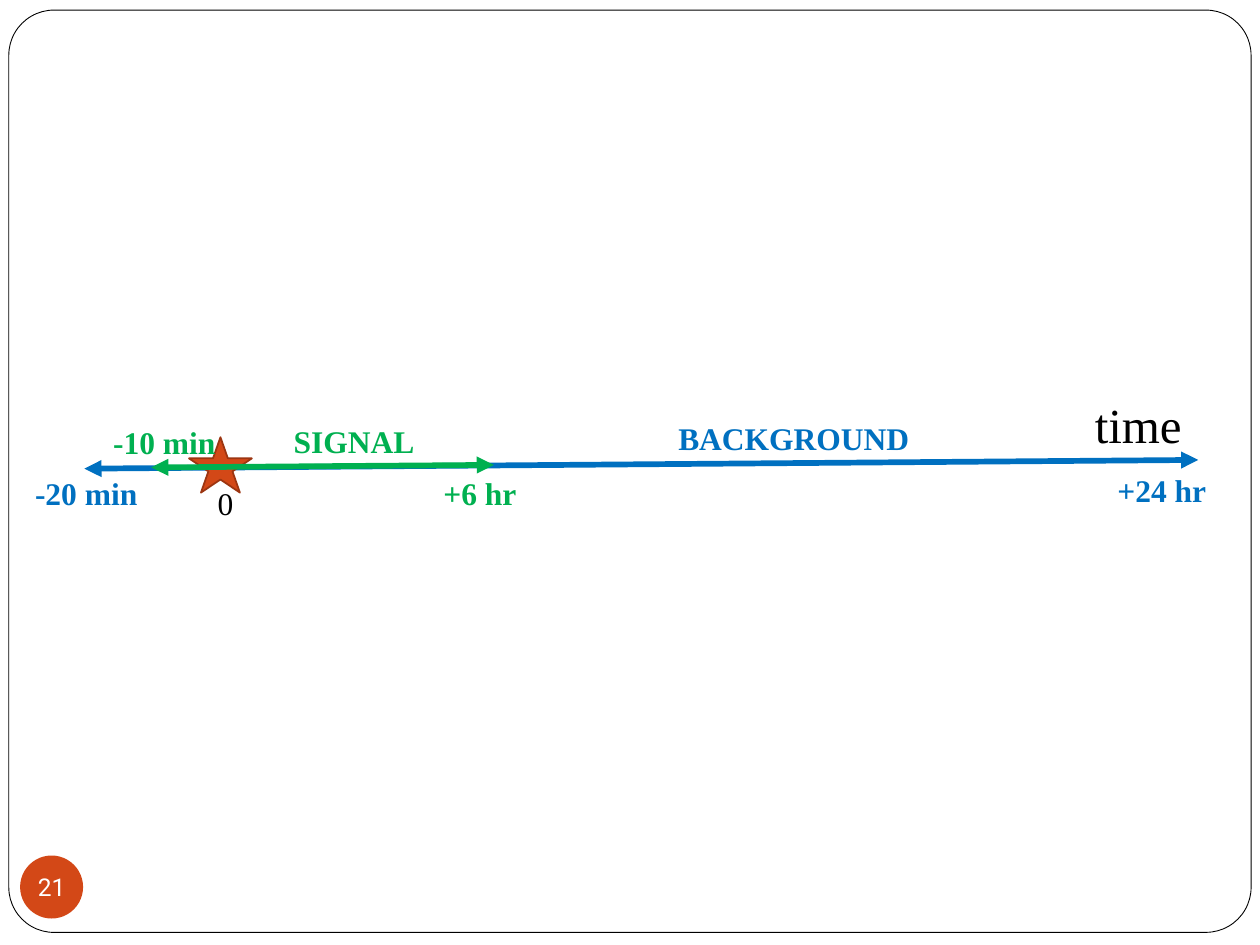
import pptx
import pptx.util
import pptx.dml.color
import pptx.enum.shapes
import pptx.enum.text
import pptx.oxml
import pptx.oxml.ns

Inches = pptx.util.Inches
Pt = pptx.util.Pt
Kind = pptx.enum.shapes.MSO_SHAPE
Align = pptx.enum.text.PP_ALIGN
hues = {"black": "000000", "white": "FFFFFF", "rust": "D34817",
        "edge": "9C3511", "blue": "0070C0", "green": "00B050"}
tone = {name: pptx.dml.color.RGBColor.from_string(hue) for name, hue in hues.items()}


def draw(home, kind, box, fill, line=None, width=1):
    shape = home.add_shape(kind, *map(Inches, box))
    shape.shadow.inherit = False
    shape.fill.solid()
    shape.fill.fore_color.rgb = tone[fill]
    if line:
        shape.line.color.rgb = tone[line]
        shape.line.width = Pt(width)
    else:
        shape.line.fill.background()
    return shape


def write(frame, text, size, color, font="Times New Roman", bold=False, align=Align.LEFT):
    frame.text = text
    para = frame.paragraphs[0]
    para.alignment = align
    run = para.runs[0]
    run.font.name = font
    run.font.size = Pt(size)
    run.font.bold = bold
    run.font.color.rgb = tone[color]


deck = pptx.Presentation()
deck.slide_width = Inches(10)
deck.slide_height = Inches(7.5)
slide = deck.slides.add_slide(deck.slide_layouts[6])

panel = draw(slide.shapes, Kind.ROUNDED_RECTANGLE, (0.07, 0.08, 9.86, 7.32), "white", "black", 0.5)
panel.adjustments[0] = 0.049

badge = draw(slide.shapes, Kind.OVAL, (0.16, 6.79, 0.5, 0.5), "rust")
frame = badge.text_frame
frame.margin_left = frame.margin_right = frame.margin_top = frame.margin_bottom = 0
frame.vertical_anchor = pptx.enum.text.MSO_ANCHOR.MIDDLE
frame.word_wrap = False
write(frame, "21", 14, "white", "Roboto", align=Align.CENTER)

chart = slide.shapes.add_group_shape().shapes
spans = [("blue", (0.67, 3.72, 9.51, 3.65)), ("green", (1.2, 3.71, 3.92, 3.69))]
for color, ends in spans:
    if color == "green":
        draw(chart, Kind.STAR_5_POINT, (1.5, 3.47, 0.5, 0.44), "rust", "edge")
    arrow = chart.add_connector(pptx.enum.shapes.MSO_CONNECTOR.STRAIGHT, *map(Inches, ends))
    arrow.line.color.rgb = tone[color]
    arrow.line.width = Pt(3.25)
    stroke = arrow.line._get_or_add_ln()
    for tag in ("a:headEnd", "a:tailEnd"):
        tip = pptx.oxml.parse_xml(f"<{tag} {pptx.oxml.ns.nsdecls('a')} type='triangle'/>")
        stroke.append(tip)
    arrow._element.spPr.append(pptx.oxml.parse_xml(f"<a:effectLst {pptx.oxml.ns.nsdecls('a')}/>"))

labels = [
    ("0", 1.63, 3.79, 0.83, "black", Align.LEFT),
    ("-10 min", 0.8, 3.31, 1.4, "green", Align.LEFT),
    ("+6 hr", 3.42, 3.71, 1.49, "green", Align.LEFT),
    ("time", 8.59, 3.08, 1.75, "black", Align.LEFT),
    ("+24 hr", 8.77, 3.69, 1.49, "blue", Align.LEFT),
    ("-20 min", 0.18, 3.71, 1.4, "blue", Align.LEFT),
    ("SIGNAL", 2.11, 3.3, 1.4, "green", Align.CENTER),
    ("BACKGROUND", 5.27, 3.28, 2.06, "blue", Align.CENTER),
]
for text, left, top, width, color, align in labels:
    size, height = (28, 0.57) if text == "time" else (18, 0.4)
    label = chart.add_textbox(*map(Inches, (left, top, width, height)))
    frame = label.text_frame
    frame.word_wrap = True
    frame.auto_size = pptx.enum.text.MSO_AUTO_SIZE.SHAPE_TO_FIT_TEXT
    write(frame, text, size, color, bold=color != "black", align=align)

deck.save("out.pptx")
